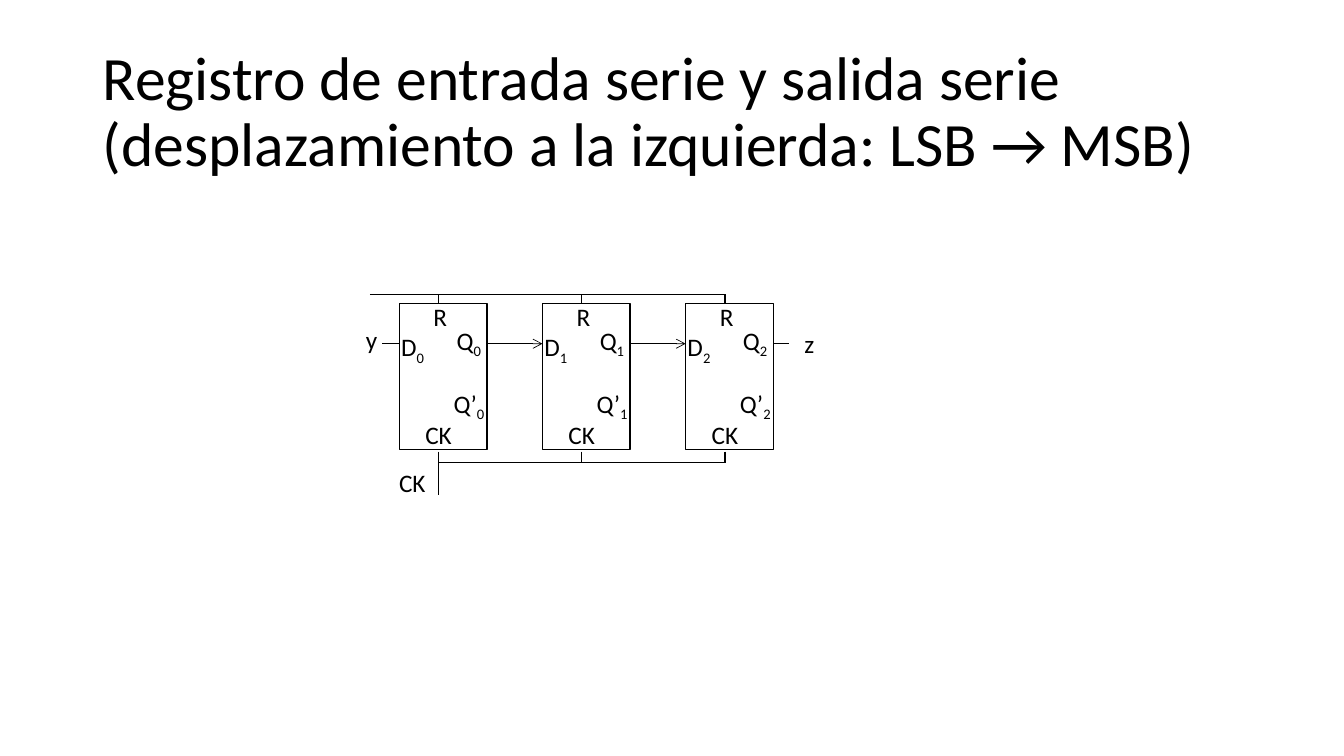
from dataclasses import dataclass

from lxml.etree import SubElement
from pptx import Presentation
from pptx.dml.color import RGBColor
from pptx.enum.shapes import MSO_CONNECTOR, MSO_SHAPE
from pptx.enum.text import MSO_ANCHOR, MSO_AUTO_SIZE
from pptx.oxml.ns import qn
from pptx.util import Inches, Pt

# Content
TITLE = ("Registro de entrada serie y salida serie "
         "(desplazamiento a la izquierda: LSB → MSB)")
STAGES = 3
# Pin text, numbered by stage or not, offset from the stage's left, top, width
PINS = [
    ("D", True, -0.08, 3.24, 0.51),
    ("Q", True, 0.47, 3.18, 0.51),
    ("R", False, 0.24, 2.94, 0.38),
    ("CK", False, 0.16, 4.11, 0.5),
    ("Q’", True, 0.44, 3.8, 0.58),
]
# Text, left, top, width
SIGNALS = [("CK", 3.86, 4.59, 0.5), ("y", 3.53, 3.17, 0.51), ("z", 7.88, 3.21, 0.51)]

# Geometry in inches
FIRST_LEFT, PITCH = 3.96, 1.42
BLOCK_TOP, BLOCK_WIDTH, BLOCK_HEIGHT = 3.01, 0.87, 1.45
PIN_CENTER = 0.39
RESET_Y, DATA_Y, CLOCK_Y = 2.92, 3.41, 4.59
LABEL_HEIGHT = 0.4


@dataclass(frozen=True)
class Theme:
    font: str = "Calibri"
    ink: RGBColor = RGBColor(0, 0, 0)
    paper: RGBColor = RGBColor(255, 255, 255)
    title_size: float = 44
    label_size: float = 18
    thick: float = 1
    thin: float = 0.5


theme = Theme()
presentation = Presentation()
presentation.slide_width, presentation.slide_height = Inches(13.33), Inches(7.5)
slide = presentation.slides.add_slide(presentation.slide_layouts[6])


def style_run(run, size):
    run.font.name = theme.font
    run.font.size = Pt(size)
    run.font.color.rgb = theme.ink


def add_label(text, left, top, width, subscript=""):
    box = slide.shapes.add_textbox(*map(Inches, (left, top, width, LABEL_HEIGHT)))
    frame = box.text_frame
    frame.word_wrap = True
    frame.auto_size = MSO_AUTO_SIZE.SHAPE_TO_FIT_TEXT
    paragraph = frame.paragraphs[0]
    paragraph.text = text
    if subscript:
        run = paragraph.add_run()
        run.text = subscript
        run.font._element.set("baseline", "-25000")
    for run in paragraph.runs:
        style_run(run, theme.label_size)


def add_wire(x1, y1, x2, y2, weight=theme.thin, arrow=False):
    wire = slide.shapes.add_connector(
        MSO_CONNECTOR.STRAIGHT, *map(Inches, (x1, y1, x2, y2)))
    wire.line.color.rgb = theme.ink
    wire.line.width = Pt(weight)
    if arrow:
        SubElement(wire.line._get_or_add_ln(), qn("a:tailEnd"), type="arrow")
    SubElement(wire._element.spPr, qn("a:effectLst"))


# Title
title = slide.shapes.add_textbox(*map(Inches, (0.92, 0.4, 11.5, 1.45)))
title.text_frame.word_wrap = True
title.text_frame.vertical_anchor = MSO_ANCHOR.MIDDLE
title.text_frame.text = TITLE
title.text_frame.paragraphs[0].line_spacing = 0.9
style_run(title.text_frame.paragraphs[0].runs[0], theme.title_size)

# Flip-flops with their pins, reset taps and clock taps
lefts = [FIRST_LEFT + PITCH * stage for stage in range(STAGES)]
for stage, left in enumerate(lefts):
    block = slide.shapes.add_shape(
        MSO_SHAPE.RECTANGLE,
        *map(Inches, (left, BLOCK_TOP, BLOCK_WIDTH, BLOCK_HEIGHT)))
    block.shadow.inherit = False
    block.fill.solid()
    block.fill.fore_color.rgb = theme.paper
    block.line.color.rgb = theme.ink
    block.line.width = Pt(theme.thick)

    center = left + PIN_CENTER
    clock_end = 4.91 if stage == 0 else CLOCK_Y
    add_wire(center, RESET_Y, center, 3.02, theme.thick)
    add_wire(center, 4.48, center, clock_end, theme.thick)
    for text, numbered, offset, top, width in PINS:
        add_label(text, left + offset, top, width, str(stage) if numbered else "")

# Data path from y to z
for left, following in zip(lefts, lefts[1:]):
    add_wire(left + BLOCK_WIDTH, DATA_Y, following, DATA_Y, arrow=True)
output_x = lefts[-1] + BLOCK_WIDTH
add_wire(3.79, DATA_Y, FIRST_LEFT, DATA_Y)
add_wire(output_x, DATA_Y, output_x + 0.16, DATA_Y)

# Shared reset and clock lines
last_center = lefts[-1] + PIN_CENTER
add_wire(3.67, RESET_Y, last_center, RESET_Y)
add_wire(FIRST_LEFT + PIN_CENTER, CLOCK_Y, last_center, CLOCK_Y)

# Signal names
for signal in SIGNALS:
    add_label(*signal)

presentation.save("out.pptx")
